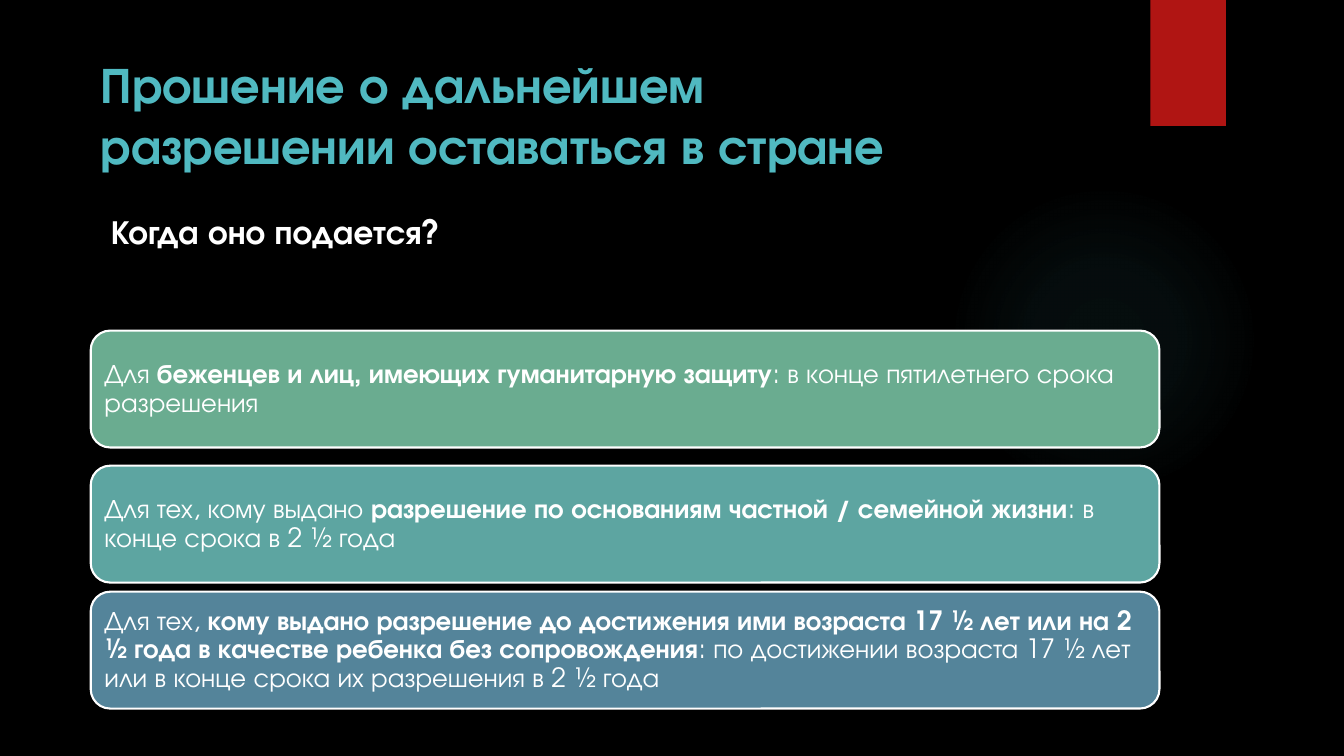
from dataclasses import dataclass

from pptx import Presentation
from pptx.dml.color import RGBColor
from pptx.enum.shapes import MSO_SHAPE
from pptx.enum.text import MSO_ANCHOR, MSO_AUTO_SIZE
from pptx.oxml import parse_xml
from pptx.oxml.ns import nsdecls
from pptx.util import Inches, Pt

RECTANGLE = MSO_SHAPE.RECTANGLE
ROUNDED = MSO_SHAPE.ROUNDED_RECTANGLE
OVAL = MSO_SHAPE.OVAL
TOP, MIDDLE = MSO_ANCHOR.TOP, MSO_ANCHOR.MIDDLE
GROW = MSO_AUTO_SIZE.SHAPE_TO_FIT_TEXT


@dataclass(frozen=True)
class Theme:
    font: str = "TeX Gyre Adventor"
    background: str = "000000"
    text: str = "FFFFFF"
    accent: str = "50B9C1"
    ribbon: str = "B01513"
    green: str = "6AAC90"
    teal: str = "5DA5A1"
    blue: str = "54849A"
    title_size: int = 36
    subtitle_size: int = 24
    card_size: int = 19


def write_text(frame, parts, *, font, size, color, anchor=TOP, inset=None, line_spacing=None):
    """Fill a frame with one paragraph of (text, bold) parts."""
    frame.word_wrap = True
    frame.vertical_anchor = anchor
    if inset is not None:
        frame.margin_left = frame.margin_right = Inches(inset)
        frame.margin_top = frame.margin_bottom = Inches(inset)
    para = frame.paragraphs[0]
    if line_spacing:
        para.line_spacing = line_spacing
    for text, bold in parts:
        span = para.add_run()
        span.text = text
        span.font.name = font
        span.font.size = Pt(size)
        span.font.bold = bold
        span.font.color.rgb = RGBColor.from_string(color)


class Page:
    def __init__(self, slide, theme):
        self.slide = slide
        self.theme = theme
        fill = slide.background.fill
        fill.solid()
        fill.fore_color.rgb = RGBColor.from_string(theme.background)

    def shape(self, kind, left, top, width, height, color, outline=None):
        box = self.slide.shapes.add_shape(
            kind, Inches(left), Inches(top), Inches(width), Inches(height))
        box.shadow.inherit = False
        box.fill.solid()
        box.fill.fore_color.rgb = RGBColor.from_string(color)
        if outline:
            box.line.color.rgb = RGBColor.from_string(outline)
            box.line.width = Pt(1.5)
        else:
            box.line.fill.background()
        return box

    def glow(self, left, top, size, stops):
        """Circle that fades out; stops are (position, opacity) in percent."""
        color = self.theme.accent
        circle = self.shape(OVAL, left, top, size, size, color)
        marks = "".join(
            f'<a:gs pos="{position * 1000}"><a:srgbClr val="{color}">'
            f'<a:alpha val="{opacity * 1000}"/></a:srgbClr></a:gs>'
            for position, opacity in stops)
        gradient = parse_xml(
            f'<a:gradFill {nsdecls("a")}><a:gsLst>{marks}</a:gsLst><a:path path="circle">'
            '<a:fillToRect l="50000" t="50000" r="50000" b="50000"/></a:path></a:gradFill>')
        properties = circle.element.spPr
        properties.replace(properties.find("{*}solidFill"), gradient)

    def heading(self, text, left, top, width, height, size, color, grow=False):
        box = self.slide.shapes.add_textbox(
            Inches(left), Inches(top), Inches(width), Inches(height))
        write_text(box.text_frame, [(text, True)],
                   font=self.theme.font, size=size, color=color)
        if grow:
            box.text_frame.auto_size = GROW

    def card(self, top, color, parts):
        theme = self.theme
        box = self.shape(ROUNDED, 0.9, top, 10.6, 1.16, color, outline=theme.text)
        write_text(box.text_frame, parts, font=theme.font, size=theme.card_size,
                   color=theme.text, anchor=MIDDLE, inset=0.08, line_spacing=0.9)
        box.text_frame.paragraphs[0].alignment = 1


def main():
    deck = Presentation()
    deck.slide_width, deck.slide_height = Inches(13.33), Inches(7.5)
    theme = Theme()
    page = Page(deck.slides.add_slide(deck.slide_layouts[6]), theme)

    # Backdrop
    page.glow(9.41, 1.83, 3.08, [(0, 7), (36, 6), (69, 0)])
    page.shape(RECTANGLE, 11.41, 0, 0.75, 1.25, theme.ribbon)

    # Title and question
    page.heading("Прошение о дальнейшем разрешении оставаться в стране",
                 0.9, 0.48, 9, 1.24, theme.title_size, theme.accent)
    page.heading("Когда оно подается?", 1, 2.04, 8.12, 0.5,
                 theme.subtitle_size, theme.text, grow=True)

    # Cards: top, colour, plain opening, bold group, plain deadline
    cards = [
        (3.28, theme.green, "Для ", "беженцев и лиц, имеющих гуманитарную защиту",
         ": в конце пятилетнего срока разрешения"),
        (4.62, theme.teal, "Для тех, кому выдано ",
         "разрешение по основаниям частной / семейной жизни",
         ": в конце срока в 2 ½ года"),
        (5.87, theme.blue, "Для тех, ",
         "кому выдано разрешение до достижения ими возраста 17 ½ лет или на 2 ½ года "
         "в качестве ребенка без сопровождения",
         ": по достижении возраста 17 ½ лет или в конце срока их разрешения в 2 ½ года"),
    ]
    for top, color, opening, group, deadline in cards:
        page.card(top, color, [(opening, False), (group, True), (deadline, False)])

    deck.save("out.pptx")


if __name__ == "__main__":
    main()
